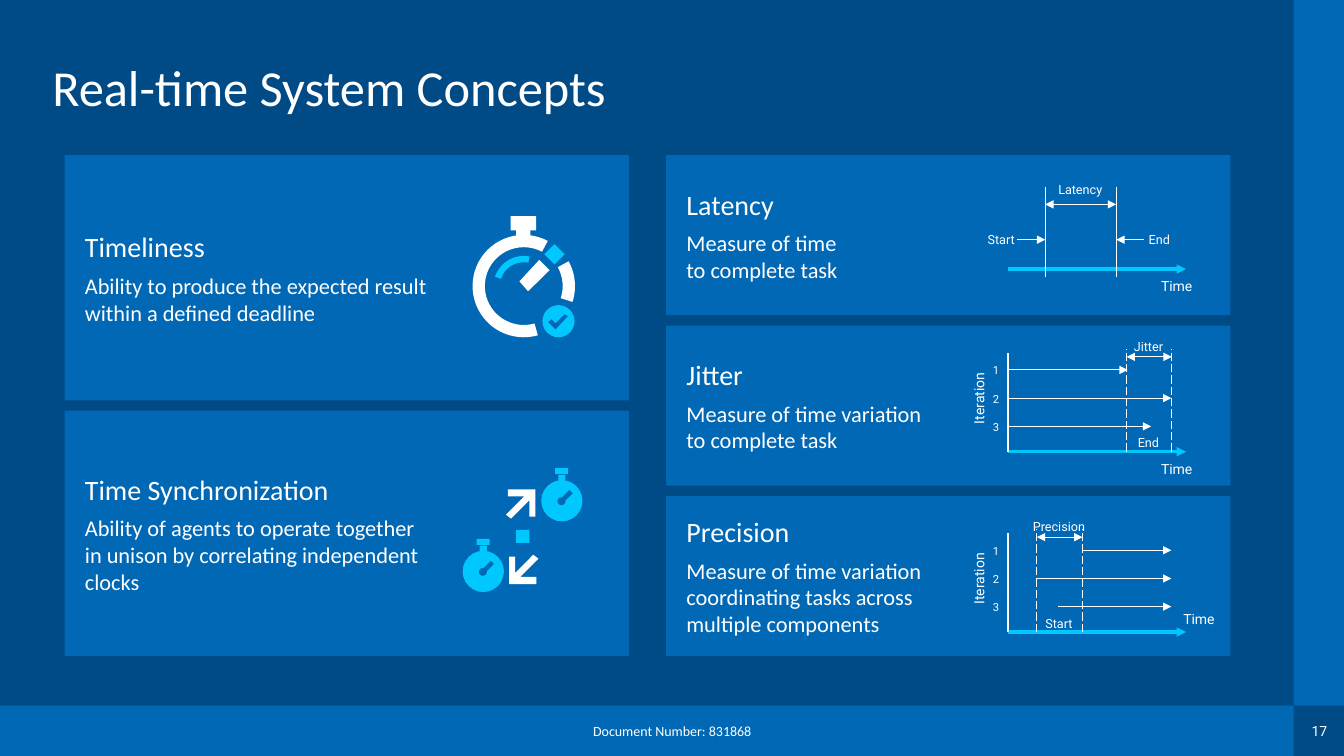
from dataclasses import dataclass
from math import cos, radians, sin

from lxml.etree import SubElement
from pptx import Presentation
from pptx.dml.color import RGBColor
from pptx.enum.dml import MSO_LINE_DASH_STYLE as Dash
from pptx.enum.shapes import MSO_CONNECTOR as Connector, MSO_SHAPE as Shape
from pptx.enum.text import MSO_ANCHOR as Anchor, MSO_AUTO_SIZE as AutoSize, PP_ALIGN as Align
from pptx.oxml.ns import qn
from pptx.util import Cm, Pt


@dataclass(frozen=True)
class Theme:
    """Colours, fonts and type sizes of the deck."""
    back: str = "004A86"
    panel: str = "0068B5"
    accent: str = "00C7FD"
    white: str = "FFFFFF"
    font: str = "Calibri"
    chart_font: str = "Roboto"
    title: int = 36
    heading: int = 20
    body: int = 16
    small: int = 10
    label: int = 9
    tick: int = 8


@dataclass(frozen=True)
class Box:
    """A rectangle in centimetres."""
    left: float
    top: float
    width: float
    height: float

    def inner(self, x, y, width, height):
        """Return a box placed relative to this one."""
        return Box(self.left + x, self.top + y, width, height)

    def lengths(self):
        """Return the four lengths for a shape call."""
        return Cm(self.left), Cm(self.top), Cm(self.width), Cm(self.height)


THEME = Theme()
SIZES = {"Start": 1.22, "End": 1.07, "Latency": 1.65, "Jitter": 1.27, "Precision": 1.85}


def style(para, size, font=THEME.font):
    """Set the font of a paragraph."""
    para.font.size, para.font.name = Pt(size), font
    para.font.color.rgb = RGBColor.from_string(THEME.white)


def paint(shape, colour):
    """Give a shape a flat fill without line or shadow."""
    shape.shadow.inherit = False
    shape.fill.solid()
    shape.fill.fore_color.rgb = RGBColor.from_string(colour)
    shape.line.fill.background()
    return shape


def add_block(page, box, colour, kind=Shape.RECTANGLE):
    """Add a flat preset shape."""
    return paint(page.shapes.add_shape(kind, *box.lengths()), colour)


def add_polygon(page, box, points, colour):
    """Add a closed outline with points relative to the box."""
    spots = [(Cm(box.left + x), Cm(box.top + y)) for x, y in points]
    builder = page.shapes.build_freeform(*spots[0])
    builder.add_line_segments(spots[1:], close=True)
    return paint(builder.convert_to_shape(), colour)


def add_label(page, box, text, size=THEME.label, font=THEME.chart_font, align=Align.LEFT, wrap=False):
    """Add a one-line text box."""
    label = page.shapes.add_textbox(*box.lengths())
    frame = label.text_frame
    frame.word_wrap, frame.auto_size = wrap, AutoSize.SHAPE_TO_FIT_TEXT
    para = frame.paragraphs[0]
    para.text, para.alignment = text, align
    style(para, size, font)
    return label


def add_line(page, box, start, end, colour=THEME.white, width=0.75, heads=(), dash=None):
    """Add a line between two points relative to the box."""
    ends = [Cm(value) for x, y in (start, end) for value in (box.left + x, box.top + y)]
    line = page.shapes.add_connector(Connector.STRAIGHT, *ends)
    line.line.color.rgb = RGBColor.from_string(colour)
    line.line.width = Pt(width)
    if dash:
        line.line.dash_style = dash
    for head in heads:
        SubElement(line.get_or_add_ln(), qn(f"a:{head}"), type="triangle")
    SubElement(line._element.spPr, qn("a:effectLst"))


def add_arrow(page, box, start, end, both=False, **look):
    """Add a line with one or two arrowheads."""
    add_line(page, box, start, end, heads=("headEnd", "tailEnd") if both else ("tailEnd",), **look)


def add_card(page, box, heading, body, right_inset):
    """Add a panel with a heading and a description."""
    card = add_block(page, box, THEME.panel)
    frame = card.text_frame
    frame.word_wrap, frame.vertical_anchor = True, Anchor.MIDDLE
    frame.margin_left, frame.margin_right = Cm(0.51), Cm(right_inset)
    frame.margin_top = frame.margin_bottom = Cm(0.25)
    frame.text = f"{heading}\n{body}"
    for para, size in zip(frame.paragraphs, (THEME.heading, THEME.body)):
        para.alignment = Align.LEFT
        style(para, size)
    frame.paragraphs[1].space_before = Pt(6)


def add_ring(page, box, centre, inner, outer, first, last, colour):
    """Add a ring segment between two angles in degrees."""
    sweep = [radians(first + (last - first) * step / 40) for step in range(41)]
    edge = [(outer, angle) for angle in sweep] + [(inner, angle) for angle in reversed(sweep)]
    points = [(centre[0] + r * cos(angle), centre[1] + r * sin(angle)) for r, angle in edge]
    add_polygon(page, box, points, colour)


def add_stopwatch(page, box):
    """Draw the large stopwatch with a check badge."""
    centre = (11.57, 3.3)
    for first, last in ((-29, 18), (74, 298)):
        add_ring(page, box, centre, 0.98, 1.29, first, last, THEME.white)
    add_ring(page, box, centre, 0.6, 0.76, 198, 281, THEME.accent)
    add_polygon(page, box, [(11.68, 3.43), (11.46, 3.18), (11.96, 2.64), (12.22, 2.9)], THEME.white)
    add_block(page, box.inner(12.09, 2.24, 0.51, 0.51), THEME.accent, Shape.DIAMOND)
    add_block(page, box.inner(11.38, 1.7, 0.36, 0.53), THEME.white)
    add_block(page, box.inner(11.24, 1.54, 0.64, 0.36), THEME.white)
    badge = box.inner(12.04, 3.78, 0.81, 0.81)
    add_block(page, badge, THEME.accent, Shape.OVAL)
    check = [(0.56, 0.23), (0.33, 0.46), (0.23, 0.36), (0.15, 0.43), (0.33, 0.61), (0.64, 0.28)]
    add_polygon(page, badge, check, THEME.panel)


def add_small_clock(page, box):
    """Draw a small stopwatch in the box."""
    add_block(page, box, THEME.accent, Shape.OVAL)
    add_block(page, box.inner(0.43, -0.13, 0.18, 0.28), THEME.accent)
    add_block(page, box.inner(0.35, -0.3, 0.33, 0.15), THEME.accent)
    add_block(page, box.inner(0.41, 0.43, 0.2, 0.2), THEME.panel, Shape.OVAL)
    add_polygon(page, box, [(0.71, 0.25), (0.79, 0.33), (0.61, 0.51), (0.53, 0.43)], THEME.panel)


def add_sync_clocks(page, box):
    """Draw two clocks exchanging time."""
    for x, y in ((10.03, 3.53), (12.01, 1.75)):
        add_small_clock(page, box.inner(x, y, 1.04, 1.04))
    add_block(page, box.inner(11.38, 3, 0.33, 0.33), THEME.accent)
    outline = [(-0.69, 0), (0, 0), (0, 0.69), (-0.15, 0.69), (-0.15, 0.28),
               (-0.61, 0.74), (-0.74, 0.64), (-0.28, 0.18), (-0.69, 0.18)]
    for x, y, turn in ((11.86, 1.98, 1), (11.2, 4.37, -1)):
        points = [(x + turn * dx, y + turn * dy) for dx, dy in outline]
        add_polygon(page, box, points, THEME.white)


def add_time_axis(page, box, base, time_spot):
    """Draw the time axis and its name."""
    add_arrow(page, box, (8.62, base), (13.1, base), colour=THEME.accent, width=2.25)
    add_label(page, box.inner(*time_spot, 1.32, 0.69), "Time", THEME.small)


def add_latency_chart(page, box):
    """Draw the span between start and end."""
    left, right = 9.55, 11.34
    add_time_axis(page, box, 2.87, (12.22, 2.97))
    for text, x, tail, tip in (("Start", 7.85, 8.84, left), ("End", 11.91, 12.04, right)):
        add_arrow(page, box, (tail, 2.13), (tip, 2.13))
        add_label(page, box.inner(x, 1.8, SIZES[text], 0.64), text)
    add_arrow(page, box, (left, 1.24), (right, 1.24), both=True)
    add_label(page, box.inner(9.63, 0.56, SIZES["Latency"], 0.64), "Latency")
    for x in (left, right):
        add_line(page, box, (x, 0.79), (x, 3.07))


def add_iteration_chart(page, box, base, time_spot, arrows, limits, span_name, edge_name):
    """Draw three iterations with a marked spread."""
    add_time_axis(page, box, base, time_spot)
    add_line(page, box, (8.61, base), (8.61, base - 2.49), width=1.5)
    name = add_label(page, box.inner(6.64, base - 1.69, 2.49, 0.69), "Iteration",
                     THEME.small, align=Align.CENTER, wrap=True)
    name.rotation = 270
    for row, (start, end) in enumerate(arrows):
        y = base - 2.06 + 0.71 * row
        add_arrow(page, box, (start, y), (end, y))
        add_label(page, box.inner(7.98, y - 0.28, 0.69, 0.61), str(row + 1), THEME.tick)
    for x in limits:
        add_line(page, box, (x, base), (x, base - 2.6), dash=Dash.LONG_DASH)
    add_arrow(page, box, *((x, base - 2.39) for x in limits), both=True)
    for text, y in ((span_name, base - 2.97), (edge_name, base - 0.54)):
        width = SIZES[text]
        add_label(page, box.inner((sum(limits) - width) / 2, y, width, 0.64), text)


def add_frame(page, box):
    """Add the title, bars, document number and page number."""
    bar = 1.27
    add_block(page, box.inner(0, box.height - bar, box.width - bar, bar), THEME.panel)
    add_block(page, box.inner(box.width - bar, 0, bar, box.height - bar), THEME.panel)
    add_label(page, box.inner(14.5, 18.08, 4.88, 0.64), "Document Number: 831868",
              THEME.small, THEME.font, Align.CENTER)
    number = add_label(page, box.inner(33.02, 18.21, 0.46, 0.43), "17", THEME.small, align=Align.CENTER)
    frame = number.text_frame
    frame.margin_left = frame.margin_right = frame.margin_top = frame.margin_bottom = 0
    title = add_label(page, box.inner(1.07, 0.61, 30.48, 3.33), "Real-time System Concepts",
                      THEME.title, THEME.font, wrap=True)
    title.text_frame.auto_size = AutoSize.NONE
    title.text_frame.vertical_anchor = Anchor.MIDDLE
    title.text_frame.paragraphs[0].line_spacing = 0.9


def add_column(page, box, cards, right_inset):
    """Stack equal cards in the box and draw their figures."""
    gap = 0.26
    height = (box.height - gap * (len(cards) - 1)) / len(cards)
    for row, (heading, body, draw, details) in enumerate(cards):
        spot = box.inner(0, row * (height + gap), box.width, height)
        add_card(page, spot, heading, body, right_inset)
        draw(page, spot, *details)


def main():
    """Build and save the deck."""
    deck = Presentation()
    deck.slide_width, deck.slide_height = Cm(33.87), Cm(19.05)
    page = deck.slides.add_slide(deck.slide_layouts[6])
    page.background.fill.solid()
    page.background.fill.fore_color.rgb = RGBColor.from_string(THEME.back)
    add_frame(page, Box(0, 0, 33.87, 19.05))
    add_column(page, Box(1.63, 3.91, 14.22, 12.62), [
        ("Timeliness", "Ability to produce the expected result within a defined deadline", add_stopwatch, ()),
        ("Time Synchronization", "Ability of agents to operate together in unison by correlating independent clocks",
         add_sync_clocks, ()),
    ], 5.08)
    jitter = (3.18, (12.22, 3.28), [(8.61, 11.63), (8.61, 12.73), (8.61, 12.22)], (11.6, 12.74), "Jitter", "End")
    precision = (3.43, (12.78, 2.77), [(10.49, 12.73), (9.33, 12.73), (9.88, 12.73)], (9.34, 10.49),
                 "Precision", "Start")
    add_column(page, Box(16.79, 3.91, 14.22, 12.62), [
        ("Latency", "Measure of time\vto complete task", add_latency_chart, ()),
        ("Jitter", "Measure of time variation\vto complete task", add_iteration_chart, jitter),
        ("Precision", "Measure of time variation\vcoordinating tasks across\vmultiple components",
         add_iteration_chart, precision),
    ], 0.51)
    deck.save("out.pptx")


if __name__ == "__main__":
    main()
